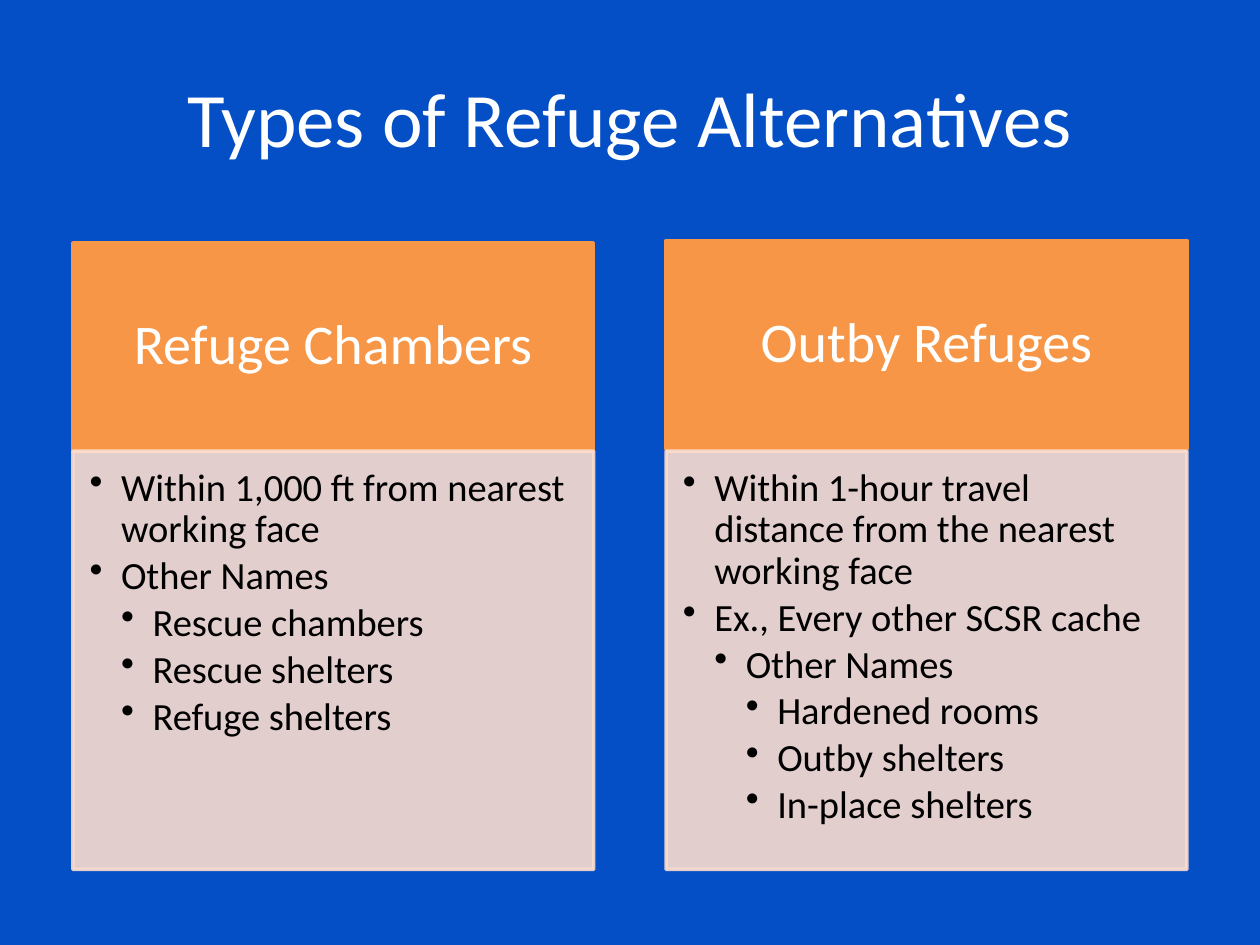
from dataclasses import dataclass

from lxml import etree
from pptx import Presentation
from pptx import util as u
from pptx.dml.color import RGBColor
from pptx.enum import shapes, text
from pptx.oxml import ns


@dataclass(frozen=True)
class Theme:
    font: str = "Calibri"
    background: str = "044EC6"
    header: str = "F79646"
    panel: str = "FCDDCF"
    light: str = "FFFFFF"
    dark: str = "000000"
    title_size: int = 44
    header_size: int = 32
    bullet_size: int = 22
    line_width: int = 2
    panel_opacity: int = 90
    indent: int = 18


class SlideBuilder:
    """Draws styled elements on one slide, with lengths in points."""

    def __init__(self, slide, theme):
        self.slide = slide
        self.theme = theme
        background = slide.background.fill
        background.solid()
        background.fore_color.rgb = RGBColor.from_string(theme.background)

    def set_lines(self, shape, lines, size, color, insets, anchor, align):
        frame = shape.text_frame
        frame.word_wrap = True
        frame.vertical_anchor = anchor
        (frame.margin_left, frame.margin_top,
         frame.margin_right, frame.margin_bottom) = map(u.Pt, insets)
        frame.text = "\n".join(lines)
        for paragraph in frame.paragraphs:
            paragraph.alignment = align
            for run in paragraph.runs:
                run.font.name = self.theme.font
                run.font.size = u.Pt(size)
                run.font.color.rgb = RGBColor.from_string(color)
        return frame.paragraphs

    def title(self, box, line):
        shape = self.slide.shapes.add_textbox(*map(u.Pt, box))
        self.set_lines(shape, [line], self.theme.title_size, self.theme.light,
                       (7.2, 3.6, 7.2, 3.6), text.MSO_ANCHOR.MIDDLE,
                       text.PP_ALIGN.CENTER)

    def rectangle(self, box, color, opacity=100):
        shape = self.slide.shapes.add_shape(
            shapes.MSO_SHAPE.RECTANGLE, *map(u.Pt, box))
        shape.shadow.inherit = False
        shape.line.width = u.Pt(self.theme.line_width)
        for fill in (shape.fill, shape.line.fill):
            fill.solid()
            fill.fore_color.rgb = RGBColor.from_string(color)
        if opacity < 100:
            for element in shape.element.spPr.iter(ns.qn("a:srgbClr")):
                etree.SubElement(element, ns.qn("a:alpha"),
                                 val=str(opacity * 1000))
        return shape

    def header(self, box, line):
        shape = self.rectangle(box, self.theme.header)
        paragraphs = self.set_lines(
            shape, [line], self.theme.header_size, self.theme.light,
            (18, 10, 18, 10), text.MSO_ANCHOR.MIDDLE, text.PP_ALIGN.CENTER)
        paragraphs[0].line_spacing = 0.9

    def bullet_panel(self, box, items):
        shape = self.rectangle(box, self.theme.panel, self.theme.panel_opacity)
        paragraphs = self.set_lines(
            shape, [line for _, line in items], self.theme.bullet_size,
            self.theme.dark, (9.6, 9.6, 12.8, 14.4), text.MSO_ANCHOR.TOP,
            text.PP_ALIGN.LEFT)
        for paragraph, (level, _) in zip(paragraphs, items):
            paragraph.level = level
            paragraph.line_spacing = 0.9
            paragraph.space_after = u.Pt(3)
            properties = paragraph._p.get_or_add_pPr()
            properties.set("marL", str(u.Pt(self.theme.indent * level)))
            properties.set("indent", str(-u.Pt(self.theme.indent)))
            etree.SubElement(properties, ns.qn("a:buChar"), char="•")


COLUMNS = [
    (41.6, 138.7, "Refuge Chambers", [
        (1, "Within 1,000 ft from nearest working face"),
        (1, "Other Names"),
        (2, "Rescue chambers"),
        (2, "Rescue shelters"),
        (2, "Refuge shelters"),
    ]),
    (380.6, 137.5, "Outby Refuges", [
        (1, "Within 1-hour travel distance from the nearest working face"),
        (1, "Ex., Every other SCSR cache"),
        (2, "Other Names"),
        (3, "Hardened rooms"),
        (3, "Outby shelters"),
        (3, "In-place shelters"),
    ]),
]


def main():
    presentation = Presentation()
    presentation.slide_width = u.Pt(720)
    presentation.slide_height = u.Pt(540)
    slide = presentation.slides.add_slide(presentation.slide_layouts[6])
    builder = SlideBuilder(slide, Theme())
    builder.title((36, 21.6, 648, 90), "Types of Refuge Alternatives")
    width = 297.7
    for left, top, heading, items in COLUMNS:
        builder.header((left, top, width, 119), heading)
        builder.bullet_panel((left, 257.8, width, 239), items)
    presentation.save("out.pptx")


if __name__ == "__main__":
    main()
